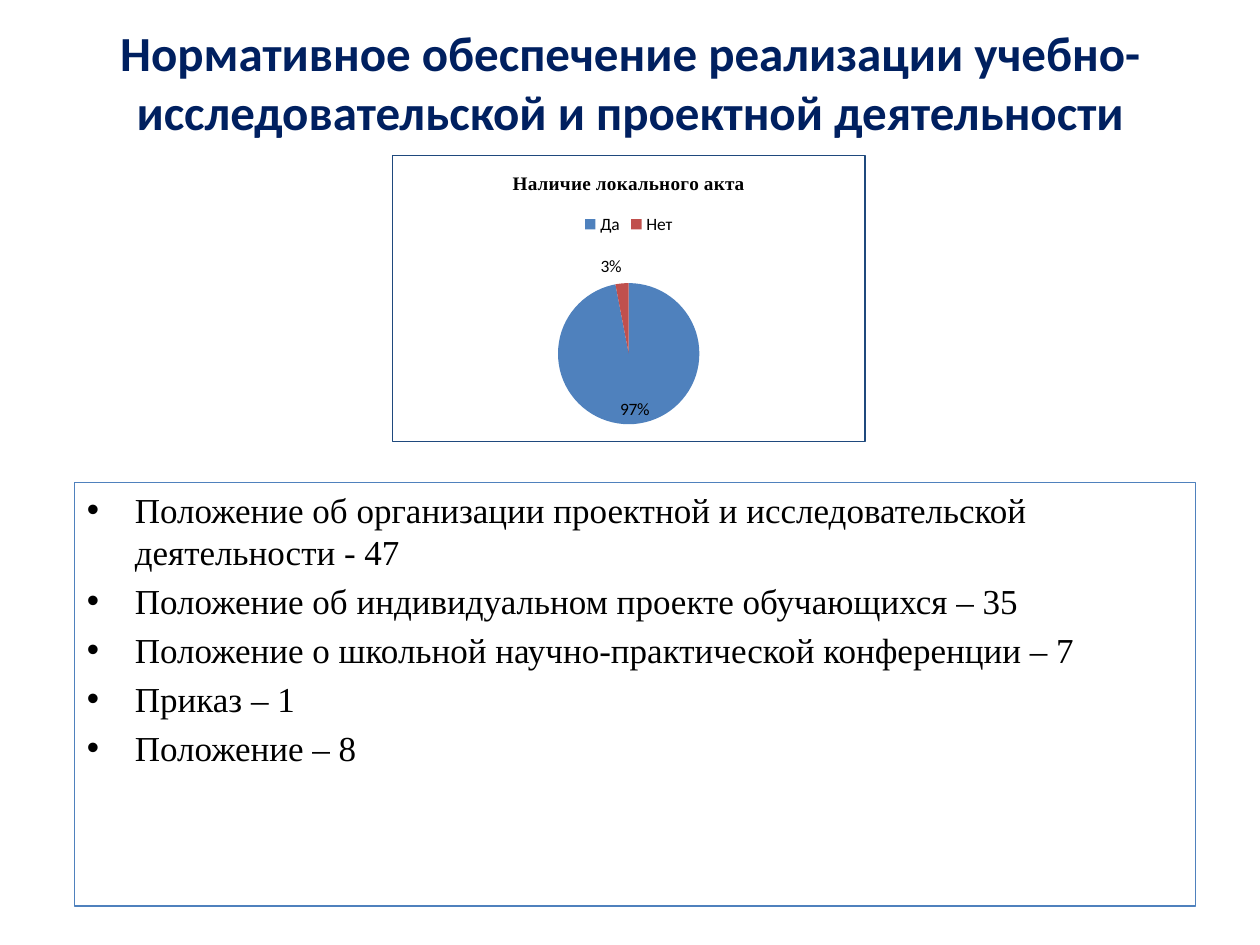
from dataclasses import dataclass

from lxml import etree
from pptx import Presentation
from pptx.chart.chart import Chart
from pptx.chart.data import CategoryChartData
from pptx.dml.color import RGBColor
from pptx.enum.chart import XL_CHART_TYPE, XL_LABEL_POSITION, XL_LEGEND_POSITION
from pptx.enum.text import MSO_ANCHOR, MSO_AUTO_SIZE, PP_ALIGN
from pptx.oxml import parse_xml
from pptx.oxml.ns import nsdecls, qn
from pptx.slide import Slide
from pptx.util import Inches, Pt

PIE = XL_CHART_TYPE.PIE
BEST_FIT = XL_LABEL_POSITION.BEST_FIT
LEGEND_TOP = XL_LEGEND_POSITION.TOP
MIDDLE = MSO_ANCHOR.MIDDLE
NO_AUTOFIT = MSO_AUTO_SIZE.NONE
CENTER = PP_ALIGN.CENTER


@dataclass(frozen=True)
class Theme:
    sans: str = "Calibri"
    serif: str = "Times New Roman"
    title_color: str = "002060"
    text_color: str = "000000"
    list_border: str = "4F81BD"
    chart_border: str = "1F497D"
    title_size: float = 28
    list_size: float = 20
    chart_title_size: float = 11
    chart_size: float = 10
    border_width: float = 0.75


@dataclass(frozen=True)
class Frame:
    left: float
    top: float
    width: float
    height: float

    def lengths(self) -> tuple:
        return tuple(Inches(n) for n in (self.left, self.top, self.width, self.height))


@dataclass(frozen=True)
class Share:
    label: str
    percent: int
    color: str


THEME = Theme()
TITLE_FRAME = Frame(0.5, 0.21, 9, 0.87)
CHART_FRAME = Frame(3.11, 1.23, 3.76, 2.28)
LIST_FRAME = Frame(0.59, 3.83, 8.9, 3.36)
TITLE = "Нормативное обеспечение реализации учебно-исследовательской и проектной деятельности"
CHART_TITLE = "Наличие локального акта"
SHARES = [Share("Да", 97, "4F81BD"), Share("Нет", 3, "C0504D")]
DOCUMENTS = [
    "Положение об организации проектной и исследовательской деятельности - 47",
    "Положение об индивидуальном проекте обучающихся – 35",
    "Положение о школьной научно-практической конференции – 7",
    "Приказ – 1",
    "Положение – 8",
]


def style_font(font, name: str, size: float, color: str, bold: bool = False) -> None:
    font.name = name
    font.size = Pt(size)
    font.bold = bold
    font.color.rgb = RGBColor.from_string(color)


def place(shape, frame: Frame) -> None:
    shape.left, shape.top, shape.width, shape.height = frame.lengths()


def fill_title(slide: Slide) -> None:
    box = slide.shapes.title
    place(box, TITLE_FRAME)
    box.text_frame.auto_size = NO_AUTOFIT
    box.text_frame.vertical_anchor = MIDDLE
    para = box.text_frame.paragraphs[0]
    para.alignment = CENTER
    span = para.add_run()
    span.text = TITLE
    style_font(span.font, THEME.sans, THEME.title_size, THEME.title_color, True)


def set_bullet(para) -> None:
    properties = para._p.get_or_add_pPr()
    properties.set("marL", str(Inches(0.38)))
    properties.set("indent", str(-Inches(0.38)))
    spacing = etree.SubElement(properties, qn("a:spcBef"))
    etree.SubElement(spacing, qn("a:spcPct")).set("val", "20000")
    etree.SubElement(properties, qn("a:buFont")).set("typeface", "Arial")
    etree.SubElement(properties, qn("a:buChar")).set("char", "•")


def fill_list(slide: Slide) -> None:
    box = slide.placeholders[1]
    place(box, LIST_FRAME)
    box.line.color.rgb = RGBColor.from_string(THEME.list_border)
    box.line.width = Pt(THEME.border_width)
    frame = box.text_frame
    frame.auto_size = NO_AUTOFIT
    for index, document in enumerate(DOCUMENTS):
        para = frame.add_paragraph() if index else frame.paragraphs[0]
        set_bullet(para)
        span = para.add_run()
        span.text = document
        style_font(span.font, THEME.serif, THEME.list_size, THEME.text_color)


def set_chart_border(chart: Chart) -> None:
    border = parse_xml(
        f'<c:spPr {nsdecls("c", "a")}><a:noFill/>'
        f'<a:ln w="{Pt(THEME.border_width)}"><a:solidFill>'
        f'<a:srgbClr val="{THEME.chart_border}"/></a:solidFill></a:ln></c:spPr>'
    )
    chart.element.find(qn("c:chart")).addnext(border)


def add_share_chart(slide: Slide) -> None:
    data = CategoryChartData()
    data.categories = [share.label for share in SHARES]
    data.add_series("Series 1", [share.percent for share in SHARES])
    chart = slide.shapes.add_chart(PIE, *CHART_FRAME.lengths(), data).chart
    style_font(chart.font, THEME.sans, THEME.chart_size, THEME.text_color)
    set_chart_border(chart)

    chart.has_title = True
    chart.chart_title.include_in_layout = False
    span = chart.chart_title.text_frame.paragraphs[0].add_run()
    span.text = CHART_TITLE
    style_font(span.font, THEME.serif, THEME.chart_title_size, THEME.text_color, True)

    chart.has_legend = True
    chart.legend.position = LEGEND_TOP
    chart.legend.include_in_layout = False

    plot = chart.plots[0]
    plot.vary_by_categories = True
    for index, share in enumerate(SHARES):
        fill = plot.series[0].points[index].format.fill
        fill.solid()
        fill.fore_color.rgb = RGBColor.from_string(share.color)

    plot.has_data_labels = True
    labels = plot.data_labels
    labels.show_percentage = True
    labels.show_value = False
    labels.number_format = "0%"
    labels.number_format_is_linked = False
    labels.position = BEST_FIT
    style_font(labels.font, THEME.sans, THEME.chart_size, THEME.text_color)


def main() -> None:
    deck = Presentation()
    deck.slide_width = Inches(10)
    deck.slide_height = Inches(7.5)
    page = deck.slides.add_slide(deck.slide_layouts[1])
    fill_list(page)
    fill_title(page)
    add_share_chart(page)
    deck.save("out.pptx")


if __name__ == "__main__":
    main()
